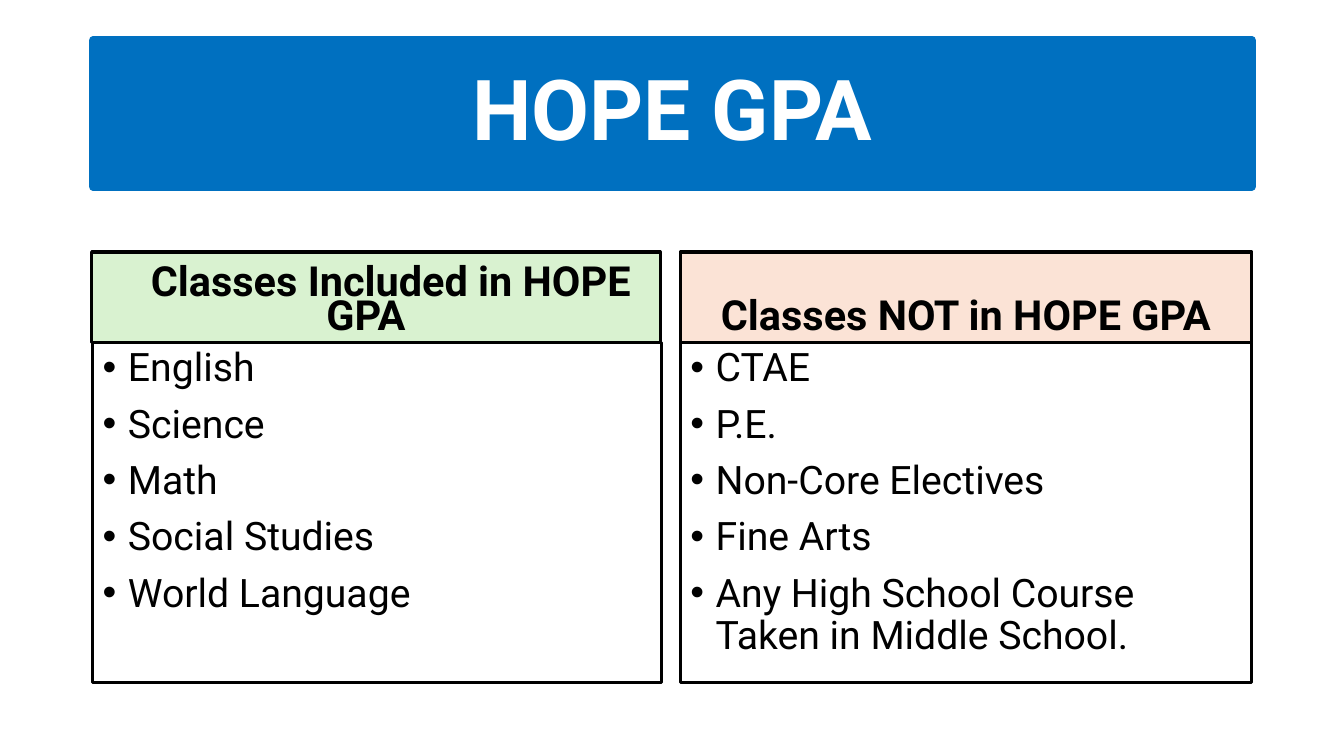
from pptx import Presentation
from pptx.dml.color import RGBColor
from pptx.enum.shapes import MSO_SHAPE
from pptx.enum.text import MSO_ANCHOR, PP_ALIGN
from pptx.oxml.ns import qn
from pptx.util import Cm, Pt
from lxml.etree import SubElement

BLUE = RGBColor(0x00, 0x70, 0xC0)
GREEN = RGBColor(0xD9, 0xF2, 0xD0)
PEACH = RGBColor(0xFB, 0xE3, 0xD6)
BLACK = RGBColor(0x00, 0x00, 0x00)
WHITE = RGBColor(0xFF, 0xFF, 0xFF)

HEADER_TOP, HEADER_HEIGHT = Cm(6.35), Cm(2.29)
LIST_TOP, LIST_HEIGHT = Cm(8.64), Cm(8.56)

TITLE_FONT = {"size": Pt(60), "bold": True}
HEADER_FONT = {"size": Pt(29.6), "bold": True}
LIST_FONT = {"size": Pt(28), "bold": False}
TITLE_PARAGRAPH = {"alignment": PP_ALIGN.CENTER, "line_spacing": 0.9}
HEADER_PARAGRAPH = {"alignment": PP_ALIGN.CENTER, "line_spacing": 0.7, "space_before": Pt(10)}
LIST_PARAGRAPH = {"alignment": PP_ALIGN.LEFT, "line_spacing": 0.9, "space_before": Pt(10)}

INCLUDED = ["English", "Science", "Math", "Social Studies", "World Language"]
NOT_INCLUDED = [
    "CTAE",
    "P.E.",
    "Non-Core Electives",
    "Fine Arts",
    "Any High School Course Taken in Middle School.",
]


def apply_format(target, values):
    for name, value in values.items():
        setattr(target, name, value)


def add_box(slide, position, fill, line_color, line_width, anchor):
    shape = slide.shapes.add_shape(MSO_SHAPE.RECTANGLE, *position)
    shape.shadow.inherit = False
    if fill is None:
        shape.fill.background()
    else:
        shape.fill.solid()
        shape.fill.fore_color.rgb = fill
    shape.line.color.rgb = line_color
    shape.line.width = line_width
    apply_format(shape.text_frame, {"word_wrap": True, "vertical_anchor": anchor})
    return shape


def write_paragraph(paragraph, text, color, font_format, paragraph_format):
    run = paragraph.add_run()
    run.text = text
    run.font.color.rgb = color
    apply_format(run.font, {"name": "Roboto", **font_format})
    apply_format(paragraph, paragraph_format)


def set_indent(paragraph, left, first_line):
    properties = paragraph._p.get_or_add_pPr()
    properties.set("marL", str(left))
    properties.set("indent", str(first_line))
    return properties


def add_bullet(paragraph):
    properties = set_indent(paragraph, Cm(0.635), Cm(-0.635))
    SubElement(properties, qn("a:buFont")).set("typeface", "Arial")
    SubElement(properties, qn("a:buChar")).set("char", "•")


def add_title(slide, text):
    position = Cm(2.34), Cm(1.02), Cm(29.21), Cm(3.68)
    shape = add_box(slide, position, BLUE, BLUE, Pt(6), MSO_ANCHOR.MIDDLE)
    write_paragraph(shape.text_frame.paragraphs[0], text, WHITE, TITLE_FONT, TITLE_PARAGRAPH)


def add_header(slide, left, width, text, fill):
    position = left, HEADER_TOP, width, HEADER_HEIGHT
    shape = add_box(slide, position, fill, BLACK, Pt(2.25), MSO_ANCHOR.BOTTOM)
    write_paragraph(shape.text_frame.paragraphs[0], text, BLACK, HEADER_FONT, HEADER_PARAGRAPH)
    return shape.text_frame


def add_class_list(slide, left, width, classes):
    position = left, LIST_TOP, width, LIST_HEIGHT
    shape = add_box(slide, position, None, BLACK, Pt(2.25), MSO_ANCHOR.TOP)
    text_frame = shape.text_frame
    for index, name in enumerate(classes):
        paragraph = text_frame.add_paragraph() if index else text_frame.paragraphs[0]
        write_paragraph(paragraph, name, BLACK, LIST_FONT, LIST_PARAGRAPH)
        add_bullet(paragraph)


def main():
    presentation = Presentation()
    apply_format(presentation, {"slide_width": Cm(33.87), "slide_height": Cm(19.05)})
    slide = presentation.slides.add_slide(presentation.slide_layouts[6])

    add_title(slide, "HOPE GPA")

    included_header = add_header(slide, Cm(2.31), Cm(14.33), "Classes Included in HOPE GPA", GREEN)
    apply_format(included_header, {"margin_left": Cm(0), "margin_right": Cm(0.5)})
    set_indent(included_header.paragraphs[0], Cm(0), Cm(1.27))
    add_class_list(slide, Cm(2.34), Cm(14.33), INCLUDED)

    add_header(slide, Cm(17.15), Cm(14.4), "Classes NOT in HOPE GPA", PEACH)
    add_class_list(slide, Cm(17.15), Cm(14.4), NOT_INCLUDED)

    presentation.save("out.pptx")


if __name__ == "__main__":
    main()
